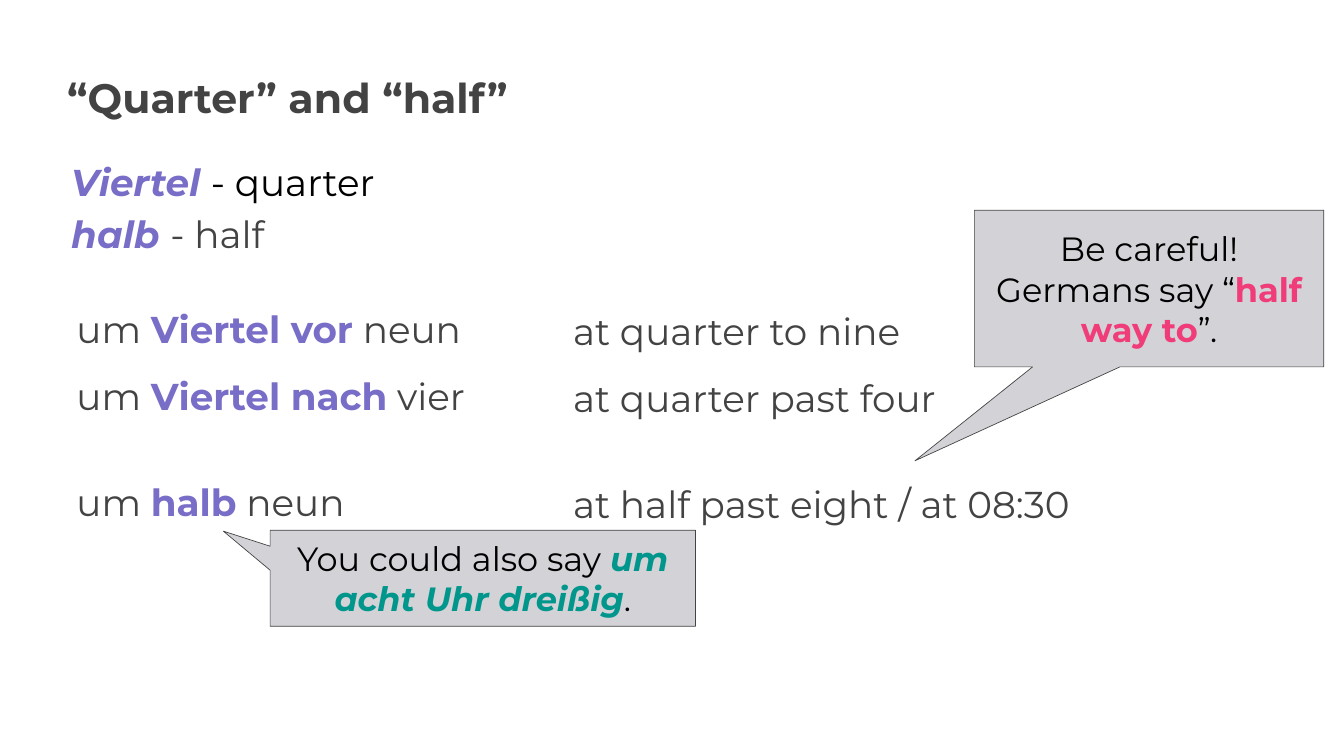
from lxml import etree
from pptx import Presentation
from pptx.dml.color import RGBColor
from pptx.enum import shapes, text
from pptx.oxml.ns import qn
from pptx.util import Inches, Pt

# Grid of one-inch units: 20 columns by 11.25 rows
COLUMNS, ROWS = 20, 11.25
GERMAN_COLUMN, ENGLISH_COLUMN = 1.04, 8.43
ENGLISH_DROP = 0.03
FONT = "Montserrat"
COLORS = {
    "text": "434343",
    "black": "000000",
    "purple": "786EC8",
    "pink": "F03C78",
    "teal": "00968C",
    "callout": "D2D2D7",
}


def color(name):
    return RGBColor.from_string(COLORS[name])


def place(shape, column, row, width, height):
    shape.left, shape.top = Inches(column), Inches(row)
    shape.width, shape.height = Inches(width), Inches(height)


def prepare_frame(shape, inset=0.1, anchor=text.MSO_ANCHOR.TOP):
    frame = shape.text_frame
    frame.word_wrap = True
    frame.auto_size = text.MSO_AUTO_SIZE.NONE
    frame.vertical_anchor = anchor
    frame.margin_left = frame.margin_right = Inches(inset)
    frame.margin_top = frame.margin_bottom = Inches(inset)
    return frame


def add_text(paragraph, words, size=40, fill="text", bold=False, italic=False):
    run = paragraph.add_run()
    run.text = words
    font = run.font
    font.name, font.size = FONT, Pt(size)
    font.bold, font.italic = bold, italic
    font.color.rgb = color(fill)


def format_paragraph(paragraph, spacing, alignment=text.PP_ALIGN.LEFT):
    paragraph.alignment = alignment
    paragraph.line_spacing = spacing
    paragraph.space_before = Pt(0)


def remove_bullet(paragraph):
    properties = paragraph._p.get_or_add_pPr()
    properties.set("marL", "0")
    properties.set("indent", "0")
    etree.SubElement(properties, qn("a:buNone"))


def fill_title(slide, words):
    title = slide.shapes.title
    place(title, 1, 0.97, 14.44, 0.86)
    paragraph = prepare_frame(title, inset=0).paragraphs[0]
    format_paragraph(paragraph, 1.15)
    add_text(paragraph, words, size=44, bold=True)


def fill_vocabulary(slide, entries):
    body = slide.placeholders[1]
    place(body, 0.96, 2.17, 9.18, 2.15)
    frame = prepare_frame(body)
    for index, (german, english, fill) in enumerate(entries):
        paragraph = frame.add_paragraph() if index else frame.paragraphs[0]
        remove_bullet(paragraph)
        format_paragraph(paragraph, 1.15)
        add_text(paragraph, german + " ", fill="purple", bold=True, italic=True)
        add_text(paragraph, "- " + english, fill=fill)


def add_phrase(slide, column, row, width, parts):
    box = slide.shapes.add_textbox(0, 0, 0, 0)
    place(box, column, row, width, 0.8)
    paragraph = prepare_frame(box).paragraphs[0]
    format_paragraph(paragraph, 1.3)
    for words, options in parts:
        add_text(paragraph, words, **options)


def add_callout(slide, position, pointer, parts):
    callout = slide.shapes.add_shape(
        shapes.MSO_SHAPE.ROUNDED_RECTANGULAR_CALLOUT, 0, 0, 0, 0)
    place(callout, *position)
    for index, value in enumerate((*pointer, 0)):
        callout.adjustments[index] = value
    callout.shadow.inherit = False
    callout.fill.solid()
    callout.fill.fore_color.rgb = color("callout")
    callout.line.color.rgb = color("text")
    callout.line.width = Pt(0.75)
    frame = prepare_frame(callout, anchor=text.MSO_ANCHOR.MIDDLE)
    paragraph = frame.paragraphs[0]
    format_paragraph(paragraph, 1.0, text.PP_ALIGN.CENTER)
    for words, options in parts:
        add_text(paragraph, words, size=36, **{"fill": "black", **options})


def main():
    presentation = Presentation()
    presentation.slide_width = Inches(COLUMNS)
    presentation.slide_height = Inches(ROWS)
    slide = presentation.slides.add_slide(presentation.slide_layouts[1])

    # Title and vocabulary
    fill_title(slide, "“Quarter” and “half”")
    fill_vocabulary(slide, [("Viertel", "quarter", "black"),
                            ("halb", "half", "text")])

    # German phrases beside their translations
    phrases = [
        (4.25, "Viertel vor", "neun", "at quarter to nine"),
        (5.25, "Viertel nach", "vier", "at quarter past four"),
        (6.83, "halb", "neun", "at half past eight / at 08:30"),
    ]
    for row, key_words, hour, english in phrases:
        german = [("um ", {}),
                  (key_words, {"fill": "purple", "bold": True}),
                  (" " + hour, {})]
        add_phrase(slide, GERMAN_COLUMN, row, 6.93, german)
        add_phrase(slide, ENGLISH_COLUMN, row + ENGLISH_DROP, 9.61,
                   [(english, {})])

    # Callouts
    add_callout(slide, (14.5, 3.13, 5.2, 2.33), (-0.67, 1.1), [
        ("Be careful! Germans say “", {}),
        ("half way to", {"fill": "pink", "bold": True}),
        ("”.", {}),
    ])
    add_callout(slide, (4.02, 7.89, 6.33, 1.43), (-0.61, -0.49), [
        ("You could also say ", {}),
        ("um acht Uhr dreißig",
         {"fill": "teal", "bold": True, "italic": True}),
        (".", {}),
    ])

    presentation.save("out.pptx")


if __name__ == "__main__":
    main()
